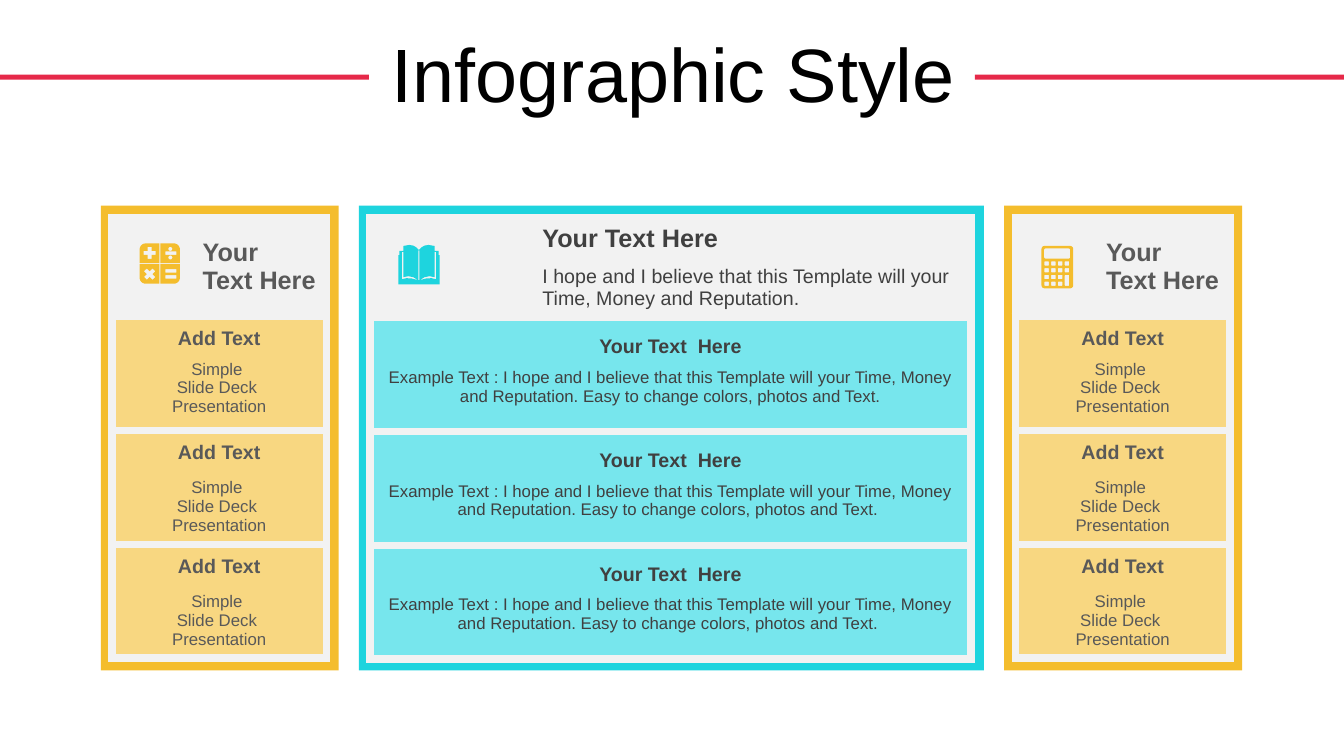
import math
from dataclasses import dataclass

import pptx
import pptx.dml.color
import pptx.enum.shapes
import pptx.enum.text
import pptx.oxml
import pptx.oxml.ns
import pptx.util

Inches = pptx.util.Inches
Anchor = pptx.enum.text.MSO_ANCHOR
Align = pptx.enum.text.PP_ALIGN
Point = tuple[float, float]
Contour = list[Point]

FONT = "Arial"
RED, YELLOW, PALE_YELLOW = "E62949", "F4BD2D", "F8D781"
CYAN, PALE_CYAN, PALE_GREY = "1ED4DE", "77E6ED", "F2F2F2"
GREY, DARK_GREY, BLACK = "595959", "404040", "000000"

PANEL_TOP, PANEL_HEIGHT = 2.04, 4.61
TABLE_INSET = 0.11
BLOCK_COUNT = 3
EXAMPLE = ("Example Text : I hope and I believe that this Template will your Time, "
           "Money and Reputation. Easy to change colors, photos and Text.")
SIMPLE = ["Simple ", "Slide Deck ", "Presentation"]


@dataclass
class HeaderRow:
    lines: list[str]
    height: float
    size: float = 18
    bold: bool = True
    anchor: Anchor = Anchor.MIDDLE


@dataclass
class Block:
    title: str
    body: list[str]
    body_anchor: Anchor


@dataclass
class Panel:
    left: float
    width: float
    frame: str
    block_fill: str
    text_color: str
    columns: list[float]
    header: list[HeaderRow]
    block_heights: tuple[float, float]
    blocks: list[Block]


def color(value: str) -> pptx.dml.color.RGBColor:
    return pptx.dml.color.RGBColor.from_string(value)


def paint(shape, fill: str) -> None:
    shape.shadow.inherit = False
    shape.fill.solid()
    shape.fill.fore_color.rgb = color(fill)
    shape.line.fill.background()


def add_box(page, left: float, top: float, width: float, height: float, fill: str) -> None:
    box = page.shapes.add_shape(pptx.enum.shapes.MSO_SHAPE.RECTANGLE, Inches(left),
                                Inches(top), Inches(width), Inches(height))
    paint(box, fill)


def write(frame, lines: list[str], *, size: float, fill: str, bold: bool = False,
          align: Align = Align.LEFT, spacing: float = 1.0, before: float = 0) -> None:
    for index, line in enumerate(lines):
        para = frame.paragraphs[0] if index == 0 else frame.add_paragraph()
        para.alignment = align
        para.line_spacing = spacing
        para.space_before = pptx.util.Pt(before)
        span = para.add_run()
        span.text = line
        span.font.name = FONT
        span.font.size = pptx.util.Pt(size)
        span.font.bold = bold
        span.font.color.rgb = color(fill)


def style_row(table, row: int, fill: str, sides: str) -> None:
    """Fill a row's cells and give them thick borders on the named sides (of L, R, T, B)."""
    namespace = pptx.oxml.ns.nsdecls("a")
    for cell in table.rows[row].cells:
        properties = cell._tc.get_or_add_tcPr()
        for side in "LRTB":
            paint_xml = (f'<a:solidFill><a:srgbClr val="{PALE_GREY}"/></a:solidFill>'
                         if side in sides else "<a:noFill/>")
            properties.append(pptx.oxml.parse_xml(
                f'<a:ln{side} {namespace} w="{pptx.util.Pt(6)}">{paint_xml}</a:ln{side}>'))
        cell.fill.solid()
        cell.fill.fore_color.rgb = color(fill)


def add_panel(page, panel: Panel) -> None:
    add_box(page, panel.left, PANEL_TOP, panel.width, PANEL_HEIGHT, panel.frame)
    heights = [row.height for row in panel.header] + list(panel.block_heights) * BLOCK_COUNT
    table = page.shapes.add_table(
        len(heights), 2, Inches(panel.left + TABLE_INSET), Inches(PANEL_TOP + TABLE_INSET + 0.01),
        Inches(sum(panel.columns)), Inches(sum(heights))).table
    table.first_row = table.horz_banding = False
    for column, width in zip(table.columns, panel.columns):
        column.width = Inches(width)
    for row, height in zip(table.rows, heights):
        row.height = Inches(height)

    for index, row in enumerate(panel.header):
        style_row(table, index, PALE_GREY, "LRTB")
        cell = table.cell(index, 1)
        cell.vertical_anchor = row.anchor
        write(cell.text_frame, row.lines, size=row.size, fill=panel.text_color, bold=row.bold)
    if len(panel.header) > 1:
        table.cell(0, 0).merge(table.cell(len(panel.header) - 1, 0))

    for index, block in enumerate(panel.blocks):
        first = len(panel.header) + 2 * index
        parts = [([block.title], 14, True, Anchor.BOTTOM, "LRT"),
                 (block.body, 12, False, block.body_anchor, "LRB")]
        for row, (lines, size, bold, anchor, sides) in enumerate(parts, first):
            style_row(table, row, panel.block_fill, sides)
            cell = table.cell(row, 0)
            cell.merge(table.cell(row, 1))
            cell.vertical_anchor = anchor
            write(cell.text_frame, lines, size=size, fill=panel.text_color, bold=bold,
                  align=Align.CENTER)


def rounded(left: float, top: float, width: float, height: float,
            radii: tuple[float, ...] = (0, 0, 0, 0)) -> Contour:
    """Outline of a box; radii run clockwise from the top left corner."""
    points = []
    for index, radius in enumerate(radii):
        x = left + width - radius if index in (1, 2) else left + radius
        y = top + height - radius if index in (2, 3) else top + radius
        for step in range(7 if radius else 1):
            angle = math.radians(180 + 90 * index + 15 * step)
            points.append((x + radius * math.cos(angle), y + radius * math.sin(angle)))
    return points


def cross(x: float, y: float, turn: float) -> Contour:
    arm, half = 0.06, 0.02
    points = []
    for quarter in range(4):
        angle = math.radians(turn + 90 * quarter)
        for along, across in [(arm, -half), (arm, half), (half, half)]:
            points.append((x + along * math.cos(angle) - across * math.sin(angle),
                           y + along * math.sin(angle) + across * math.cos(angle)))
    return points


def mirror(contour: Contour, axis: float) -> Contour:
    return [(2 * axis - x, y) for x, y in reversed(contour)]


def add_icon(page, contours: list[Contour], fill: str) -> None:
    """Draw contours as one shape; inner contours become holes."""
    scaled = [[(Inches(x), Inches(y)) for x, y in contour] for contour in contours]
    builder = page.shapes.build_freeform(*scaled[0][0])
    builder.add_line_segments(scaled[0][1:], close=True)
    for contour in scaled[1:]:
        builder.move_to(*contour[0])
        builder.add_line_segments(contour[1:], close=True)
    paint(builder.convert_to_shape(), fill)


def operators_icon() -> list[Contour]:
    left, top, tile, pitch, radius = 1.385, 2.415, 0.195, 0.205, 0.06
    contours = []
    for corner, (column, row) in enumerate([(0, 0), (1, 0), (1, 1), (0, 1)]):
        radii = tuple(radius if index == corner else 0 for index in range(4))
        contours.append(rounded(left + column * pitch, top + row * pitch, tile, tile, radii))
    contours += [cross(1.485, 2.51, 0), cross(1.485, 2.72, 45)]
    contours += [rounded(1.64, y, 0.11, 0.035) for y in (2.495, 2.67, 2.73)]
    contours += [rounded(1.67, y, 0.04, 0.04, (0.02,) * 4) for y in (2.45, 2.535)]
    return contours


def calculator_icon() -> list[Contour]:
    key, pitch, left, top = 0.043, 0.067, 10.36, 2.592
    contours = [rounded(10.33, 2.44, 0.315, 0.42, (0.03,) * 4),
                rounded(10.355, 2.465, 0.26, 0.1, (0.015,) * 4)]
    for column in range(4):
        for row in range(3 if column == 3 else 4):
            height = key + pitch if (column, row) == (3, 2) else key
            contours.append(rounded(left + column * pitch, top + row * pitch, key, height,
                                    (0.005,) * 4))
    return contours


def book_icon() -> list[Contour]:
    spine = 4.155
    cover = [(spine, 2.48), (4.13, 2.455), (4.1, 2.437), (4.06, 2.43), (4, 2.44), (4, 2.49),
             (3.96, 2.49), (3.96, 2.53), (3.95, 2.53), (3.95, 2.82)]
    page_edge = [(4, 2.5), (3.985, 2.5), (3.985, 2.77), (4.03, 2.76), (4.08, 2.762),
                 (4.148, 2.78), (4.1, 2.75), (4.05, 2.74), (4, 2.75)]
    return [cover + mirror(cover, spine), page_edge, mirror(page_edge, spine),
            rounded(4.15, 2.485, 0.01, 0.295)]


def side_panel(left: float) -> Panel:
    anchors = [Anchor.TOP, Anchor.MIDDLE, Anchor.MIDDLE]
    return Panel(left, 2.36, YELLOW, PALE_YELLOW, GREY, [0.8, 1.33],
                 [HeaderRow(["Your", "Text Here"], 0.98)], (0.38, 0.75),
                 [Block("Add Text", SIMPLE, anchor) for anchor in anchors])


def main() -> None:
    deck = pptx.Presentation()
    deck.slide_width, deck.slide_height = Inches(13.33), Inches(7.5)
    page = deck.slides.add_slide(deck.slide_layouts[6])

    for left in (0, 9.67):
        add_box(page, left, 0.74, 3.66, 0.05, RED)
    title = page.shapes.add_textbox(Inches(0.35), Inches(0.31), Inches(12.66), Inches(0.92))
    title.text_frame.word_wrap = True
    title.text_frame.vertical_anchor = Anchor.MIDDLE
    write(title.text_frame, ["Infographic Style"], size=54, fill=BLACK, align=Align.CENTER,
          spacing=0.9, before=10)

    center = Panel(
        3.56, 6.2, CYAN, PALE_CYAN, DARK_GREY, [1.61, 4.35],
        [HeaderRow(["Your Text Here"], 0.4, anchor=Anchor.BOTTOM),
         HeaderRow(["I hope and I believe that this Template will your Time, "
                    "Money and Reputation."], 0.59, size=14, bold=False)],
        (0.45, 0.68),
        [Block("Your Text  Here", [EXAMPLE + ending], Anchor.TOP) for ending in ("", " ", " ")])
    for panel in (side_panel(9.96), center, side_panel(1)):
        add_panel(page, panel)

    add_icon(page, calculator_icon(), YELLOW)
    add_icon(page, operators_icon(), YELLOW)
    add_icon(page, book_icon(), CYAN)
    deck.save("out.pptx")


if __name__ == "__main__":
    main()
